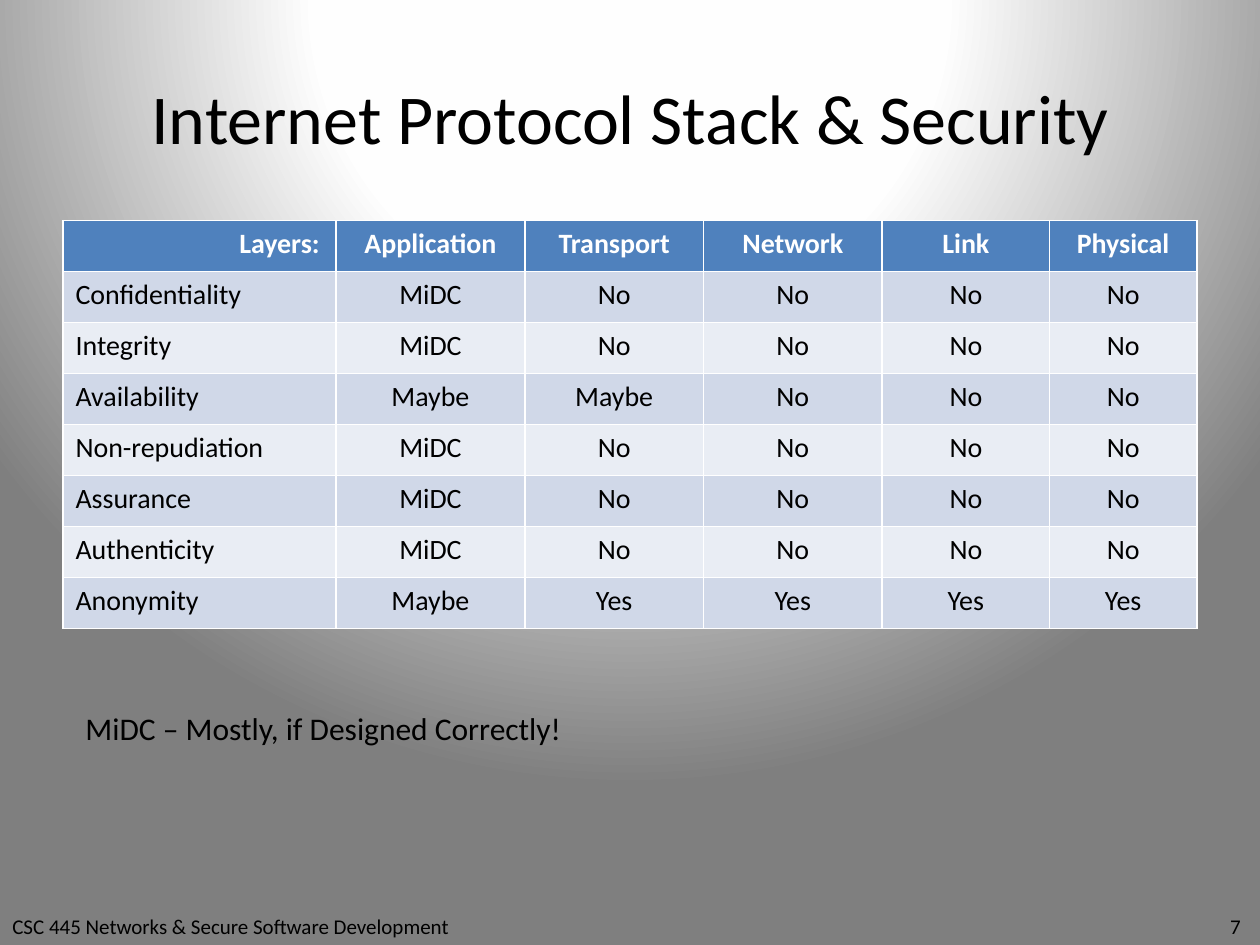
from dataclasses import dataclass

from lxml import etree
from pptx import Presentation
from pptx.dml.color import RGBColor
from pptx.enum import text as t
from pptx.oxml import ns, parse_xml
from pptx.util import Inches, Pt


@dataclass(frozen=True)
class Theme:
    font: str = "Calibri"
    ink: str = "000000"
    header_ink: str = "FFFFFF"
    header_fill: str = "4F81BD"
    bands: tuple = ("D0D8E8", "E9EDF4")
    glow: tuple = ((0, "FFFFFF"), (40, "FEFEFE"), (100, "7F7F7F"))
    title_size: int = 40
    note_size: int = 18
    table_size: int = 16
    footer_size: int = 12


THEME = Theme()
LEFT, CENTER, RIGHT = t.PP_ALIGN.LEFT, t.PP_ALIGN.CENTER, t.PP_ALIGN.RIGHT

LAYERS = ("Layers:", "Application", "Transport", "Network", "Link", "Physical")
LOWER_NO = ("No",) * 4
SECURITY_GOALS = (
    ("Confidentiality", "MiDC", *LOWER_NO),
    ("Integrity", "MiDC", *LOWER_NO),
    ("Availability", "Maybe", "Maybe", "No", "No", "No"),
    ("Non-repudiation", "MiDC", *LOWER_NO),
    ("Assurance", "MiDC", *LOWER_NO),
    ("Authenticity", "MiDC", *LOWER_NO),
    ("Anonymity", "Maybe", "Yes", "Yes", "Yes", "Yes"),
)
COLUMN_WIDTHS = (2.17, 1.5, 1.42, 1.42, 1.33, 1.17)


def write_text(frame, text, size, color=THEME.ink, bold=False, align=LEFT):
    paragraph = frame.paragraphs[0]
    paragraph.alignment = align
    run = paragraph.add_run()
    run.text = text
    run.font.name = THEME.font
    run.font.size = Pt(size)
    run.font.bold = bold
    run.font.color.rgb = RGBColor.from_string(color)
    return paragraph


def paint_background(slide):
    """Fill the background with a circular glow centred above the slide."""
    fill = slide.background.fill
    fill.gradient()
    stops = "".join(
        f'<a:gs pos="{position * 1000}"><a:srgbClr val="{color}"/></a:gs>'
        for position, color in THEME.glow)
    gradient = parse_xml(
        f'<a:gradFill {ns.nsdecls("a")} rotWithShape="1"><a:gsLst>{stops}</a:gsLst>'
        '<a:path path="circle"><a:fillToRect l="50000" t="-80000" r="50000" b="180000"/>'
        '</a:path></a:gradFill>')
    old = slide.element.xpath("./p:cSld/p:bg/p:bgPr/a:gradFill")[0]
    old.getparent().replace(old, gradient)


def place_title(slide, text, left, top, width, height):
    title = slide.shapes.title
    title.left, title.top = Inches(left), Inches(top)
    title.width, title.height = Inches(width), Inches(height)
    title.text_frame.vertical_anchor = t.MSO_ANCHOR.MIDDLE
    write_text(title.text_frame, text, THEME.title_size, align=CENTER)


def add_security_table(slide, left, top, width, height):
    rows = (LAYERS, *SECURITY_GOALS)
    table = slide.shapes.add_table(
        len(rows), len(LAYERS),
        Inches(left), Inches(top), Inches(width), Inches(height)).table
    for column, share in zip(table.columns, COLUMN_WIDTHS):
        column.width = Inches(width * share / sum(COLUMN_WIDTHS))
    for row_index, values in enumerate(rows):
        header = row_index == 0
        fill = THEME.header_fill if header else THEME.bands[(row_index - 1) % 2]
        for column_index, value in enumerate(values):
            cell = table.cell(row_index, column_index)
            cell.fill.solid()
            cell.fill.fore_color.rgb = RGBColor.from_string(fill)
            first_align = RIGHT if header else LEFT
            write_text(cell.text_frame, value, THEME.table_size, bold=header,
                       color=THEME.header_ink if header else THEME.ink,
                       align=CENTER if column_index else first_align)
    table.cell(0, 0).margin_right = Inches(0.13)


def add_text_box(slide, text, size, left, top, width, height, wrap=True):
    box = slide.shapes.add_textbox(
        Inches(left), Inches(top), Inches(width), Inches(height))
    box.text_frame.word_wrap = wrap
    return write_text(box.text_frame, text, size)


def add_footer(slide, course, number, left, top, width, height):
    """Put the course at the left and the page number at a right tab."""
    paragraph = add_text_box(slide, f"{course}\t{number}", THEME.footer_size,
                             left, top, width, height)
    properties = paragraph._p.get_or_add_pPr()
    tabs = etree.SubElement(properties, ns.qn("a:tabLst"))
    etree.SubElement(tabs, ns.qn("a:tab"), pos=str(Inches(width - 0.25)), algn="r")


def main():
    presentation = Presentation()
    presentation.slide_width, presentation.slide_height = Inches(10), Inches(7.5)
    slide = presentation.slides.add_slide(presentation.slide_layouts[5])
    paint_background(slide)
    add_footer(slide, "CSC 445 Networks & Secure Software Development", 7,
               0, 7.2, 10, 0.3)
    place_title(slide, "Internet Protocol Stack & Security", 0.5, 0.3, 9, 1.25)
    add_security_table(slide, 0.5, 1.75, 9, 3.24)
    add_text_box(slide, "MiDC – Mostly, if Designed Correctly!", THEME.note_size,
                 0.58, 5.58, 4.02, 0.4, wrap=False)
    presentation.save("out.pptx")


if __name__ == "__main__":
    main()
